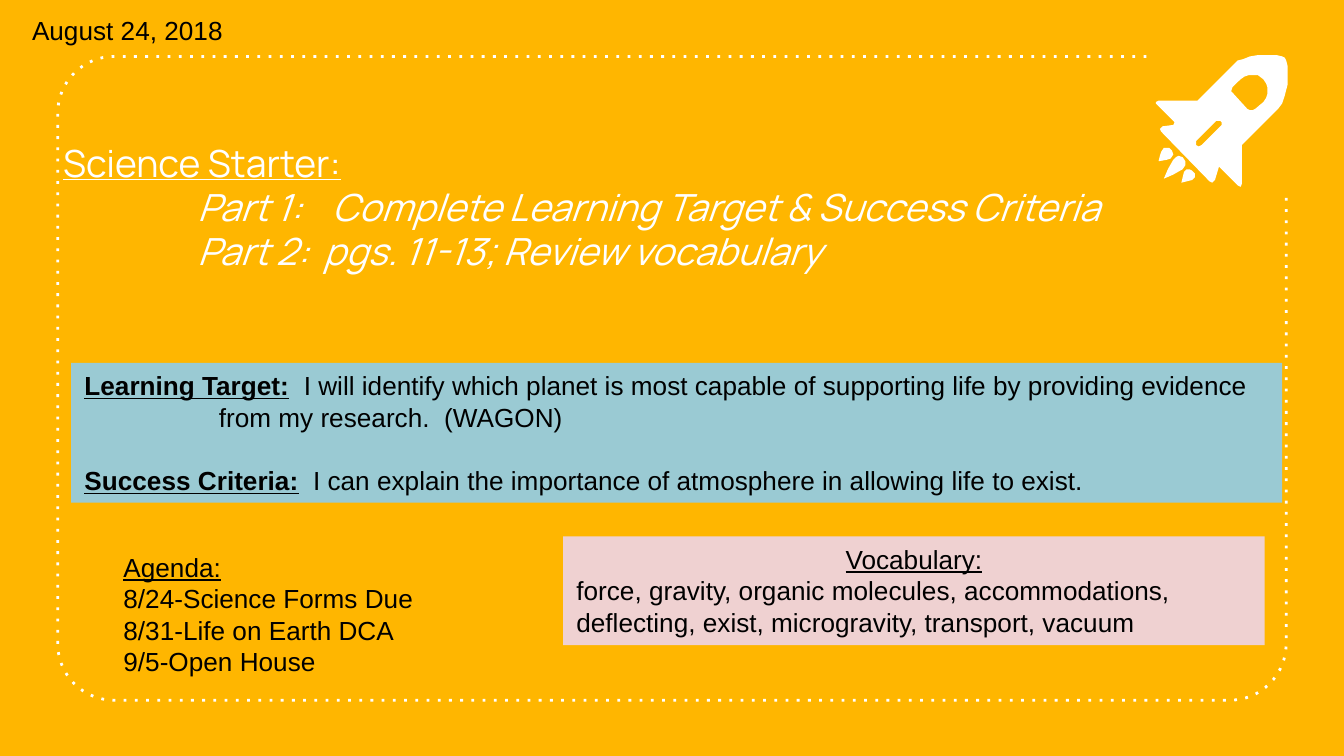
"""Build a science class opener with a starter, learning target, agenda and vocabulary."""
import math
from dataclasses import dataclass
from typing import Optional

import lxml.etree
import pptx
import pptx.dml.color
import pptx.enum.dml
import pptx.enum.shapes
import pptx.enum.text
import pptx.oxml.ns
import pptx.util

Inches = pptx.util.Inches
Pt = pptx.util.Pt
qn = pptx.oxml.ns.qn
ALIGN = pptx.enum.text.PP_ALIGN
ANCHOR = pptx.enum.text.MSO_ANCHOR
COLORS = {"background": "FFB600", "light": "FFFFFF", "dark": "000000",
          "target": "9ACAD3", "vocabulary": "EFD1D1"}


@dataclass
class Para:
    """Hold an optional underlined heading, its body and paragraph format."""
    heading: str = ""
    body: str = ""
    bold: bool = False
    align: ALIGN = ALIGN.LEFT
    hanging: float = 0
    before: float = 0


@dataclass
class Panel:
    """Hold the position, paragraphs and fill of a text panel."""
    box: tuple
    paras: list
    fill: Optional[str] = None


PANELS = [
    Panel((0.14, 0.06, 1.67, 0.34), [Para(body="August 24, 2018")]),
    Panel((0.53, 2.7, 9.01, 1.04), [
        Para("Learning Target:", "  I will identify which planet is most capable of supporting "
             "life by providing evidence from my research.  (WAGON)", bold=True, hanging=1),
        Para("Success Criteria:", "  I can explain the importance of atmosphere in allowing "
             "life to exist.", bold=True, before=16.9)], "target"),
    Panel((0.82, 4.05, 2.49, 1.04), [
        Para("Agenda:"), Para(body="8/24-Science Forms Due"),
        Para(body="8/31-Life on Earth DCA"), Para(body="9/5-Open House")]),
    Panel((4.19, 3.99, 5.22, 0.81), [
        Para("Vocabulary:", align=ALIGN.CENTER),
        Para(body="force, gravity, organic molecules, accommodations, deflecting, exist, "
             "microgravity, transport, vacuum")], "vocabulary"),
]

WINDOW = [(9.32, 0.56), (9.36, 0.56), (9.4, 0.59), (9.42, 0.62), (9.43, 0.65), (9.43, 0.7),
          (9.42, 0.73), (9.4, 0.76), (9.34, 0.81), (9.32, 0.82), (9.3, 0.82), (9.28, 0.81),
          (9.18, 0.7), (9.16, 0.68), (9.17, 0.65), (9.23, 0.59), (9.26, 0.57), (9.29, 0.56)]
SLOT = [(9.06, 0.9), (9.08, 0.9), (9.09, 0.91), (9.09, 0.93), (8.94, 1.08), (8.92, 1.09),
        (8.9, 1.08), (8.9, 1.05), (9.05, 0.9)]
HULL = [(9.42, 0.41), (9.36, 0.41), (9.3, 0.42), (9.25, 0.44), (9.21, 0.45), (9.18, 0.48),
        (8.91, 0.75), (8.62, 0.75), (8.6, 0.76), (8.6, 0.77), (8.74, 0.91), (8.73, 0.93),
        (8.65, 0.94), (8.63, 0.96), (8.64, 0.98), (9, 1.35), (9.02, 1.36), (9.04, 1.34),
        (9.07, 1.24), (9.21, 1.38), (9.23, 1.39), (9.24, 1.37), (9.24, 1.08), (9.51, 0.81),
        (9.54, 0.77), (9.56, 0.71), (9.58, 0.63), (9.58, 0.49), (9.57, 0.45), (9.56, 0.43),
        (9.54, 0.42), (9.5, 0.41)]
LARGE_FLAME = [(8.77, 1.16), (8.75, 1.17), (8.73, 1.19), (8.69, 1.26), (8.66, 1.33),
               (8.73, 1.3), (8.8, 1.26), (8.82, 1.23), (8.82, 1.2), (8.8, 1.17)]
RIGHT_FLAME = [(8.85, 1.26), (8.83, 1.26), (8.81, 1.28), (8.8, 1.32), (8.79, 1.36),
               (8.83, 1.35), (8.87, 1.34), (8.89, 1.32), (8.89, 1.29), (8.87, 1.27)]
LEFT_FLAME = [(8.68, 1.1), (8.66, 1.1), (8.64, 1.13), (8.63, 1.16), (8.62, 1.2),
              (8.68, 1.19), (8.71, 1.18), (8.73, 1.15), (8.72, 1.12), (8.7, 1.1)]


def rgb(name: str) -> pptx.dml.color.RGBColor:
    """Return a named colour."""
    return pptx.dml.color.RGBColor.from_string(COLORS[name])


def add_text(p, text: str, *, size: float = 14, font: str = "Arial", color: str = "dark",
             bold: bool = False, italic: bool = False, underline: bool = False) -> None:
    """Append a formatted run to a paragraph."""
    r = p.add_run()
    r.text = text
    r.font.size, r.font.name = Pt(size), font
    r.font.bold, r.font.italic, r.font.underline = bold, italic, underline
    r.font.color.rgb = rgb(color)


def draw_panel(shapes, panel: Panel) -> None:
    """Draw a text panel, filled when it has a colour."""
    box = [Inches(v) for v in panel.box]
    if panel.fill:
        sp = shapes.add_shape(pptx.enum.shapes.MSO_SHAPE.RECTANGLE, *box)
        sp.shadow.inherit = False
        sp.fill.solid()
        sp.fill.fore_color.rgb = rgb(panel.fill)
        sp.line.fill.background()
    else:
        sp = shapes.add_textbox(*box)
    tf = sp.text_frame
    tf.word_wrap = True
    tf.vertical_anchor = ANCHOR.TOP
    for i, para in enumerate(panel.paras):
        p = tf.add_paragraph() if i else tf.paragraphs[0]
        p.alignment = para.align
        p.line_spacing = Pt(16.9)
        p.space_before = Pt(para.before)
        if para.hanging:
            pPr = p._p.get_or_add_pPr()
            pPr.set("marL", str(Inches(para.hanging)))
            pPr.set("indent", str(-Inches(para.hanging)))
        if para.heading:
            add_text(p, para.heading, bold=para.bold, underline=True)
        if para.body:
            add_text(p, para.body)


def draw_outline(shapes, contours: list, closed: bool = True):
    """Draw one freeform from contours given in inches."""
    paths = [[(Inches(x), Inches(y)) for x, y in contour] for contour in contours]
    builder = shapes.build_freeform(*paths[0][0])
    for i, path in enumerate(paths):
        if i:
            builder.move_to(*path[0])
        builder.add_line_segments(path[1:], close=closed)
    sp = builder.convert_to_shape()
    sp.shadow.inherit = False
    return sp


def corner(cx: float, cy: float, start: int, radius: float = 0.42) -> list:
    """Return a quarter turn, counterclockwise on screen, from a start angle."""
    angles = [math.radians(start + 90 * i / 16) for i in range(17)]
    return [(cx + radius * math.cos(a), cy - radius * math.sin(a)) for a in angles]


def draw_frame(shapes):
    """Draw the dotted rounded frame, open at the rocket."""
    points = [(8.53, 0.42), *corner(0.85, 0.84, 90), *corner(0.85, 4.79, 180),
              *corner(9.15, 4.79, 270), (9.57, 1.46)]
    sp = draw_outline(shapes, [points], closed=False)
    sp.fill.background()
    sp.line.color.rgb = rgb("light")
    sp.line.width = Pt(1.5)
    sp.line.dash_style = pptx.enum.dml.MSO_LINE.ROUND_DOT
    sp.element.find(".//" + qn("a:prstDash")).set("val", "dot")
    return sp


def draw_rocket(shapes) -> None:
    """Draw the rocket and its flames as one group."""
    group = shapes.add_group_shape()
    for contours in ([WINDOW, SLOT, HULL], [LARGE_FLAME], [RIGHT_FLAME], [LEFT_FLAME]):
        sp = draw_outline(group.shapes, contours)
        sp.fill.solid()
        sp.fill.fore_color.rgb = rgb("light")
        sp.line.fill.background()


def format_title(title) -> None:
    """Place and write the starter title with tab stops every inch."""
    title.left, title.top, title.width, title.height = map(Inches, (0.37, 0.5, 8.5, 1.63))
    tf = title.text_frame
    tf.word_wrap = True
    tf.auto_size = pptx.enum.text.MSO_AUTO_SIZE.NONE
    tf.vertical_anchor = ANCHOR.BOTTOM
    tf.margin_left = tf.margin_right = tf.margin_top = tf.margin_bottom = Inches(0.1)
    p = tf.paragraphs[0]
    p.alignment = ALIGN.LEFT
    p.line_spacing = Pt(23.6)
    tabs = lxml.etree.SubElement(p._p.get_or_add_pPr(), qn("a:tabLst"))
    for inch in (1, 2):
        lxml.etree.SubElement(tabs, qn("a:tab"), pos=str(Inches(inch)), algn="l")
    style = {"size": 20, "font": "Manrope", "color": "light"}
    add_text(p, "Science Starter:", underline=True, **style)
    for line in ("\tPart 1:  \tComplete Learning Target & Success Criteria",
                 "\tPart 2:  pgs. 11-13; Review vocabulary"):
        p.add_line_break()
        add_text(p, line, italic=True, **style)


def main() -> None:
    """Build and save the slide."""
    prs = pptx.Presentation()
    prs.slide_width, prs.slide_height = Inches(10), Inches(10 * 9 / 16)
    s = prs.slides.add_slide(prs.slide_layouts[5])
    s.background.fill.solid()
    s.background.fill.fore_color.rgb = rgb("background")
    title = s.shapes.title
    format_title(title)
    title.element.addprevious(draw_frame(s.shapes).element)
    draw_rocket(s.shapes)
    for panel in PANELS:
        draw_panel(s.shapes, panel)
    prs.save("out.pptx")


if __name__ == "__main__":
    main()
